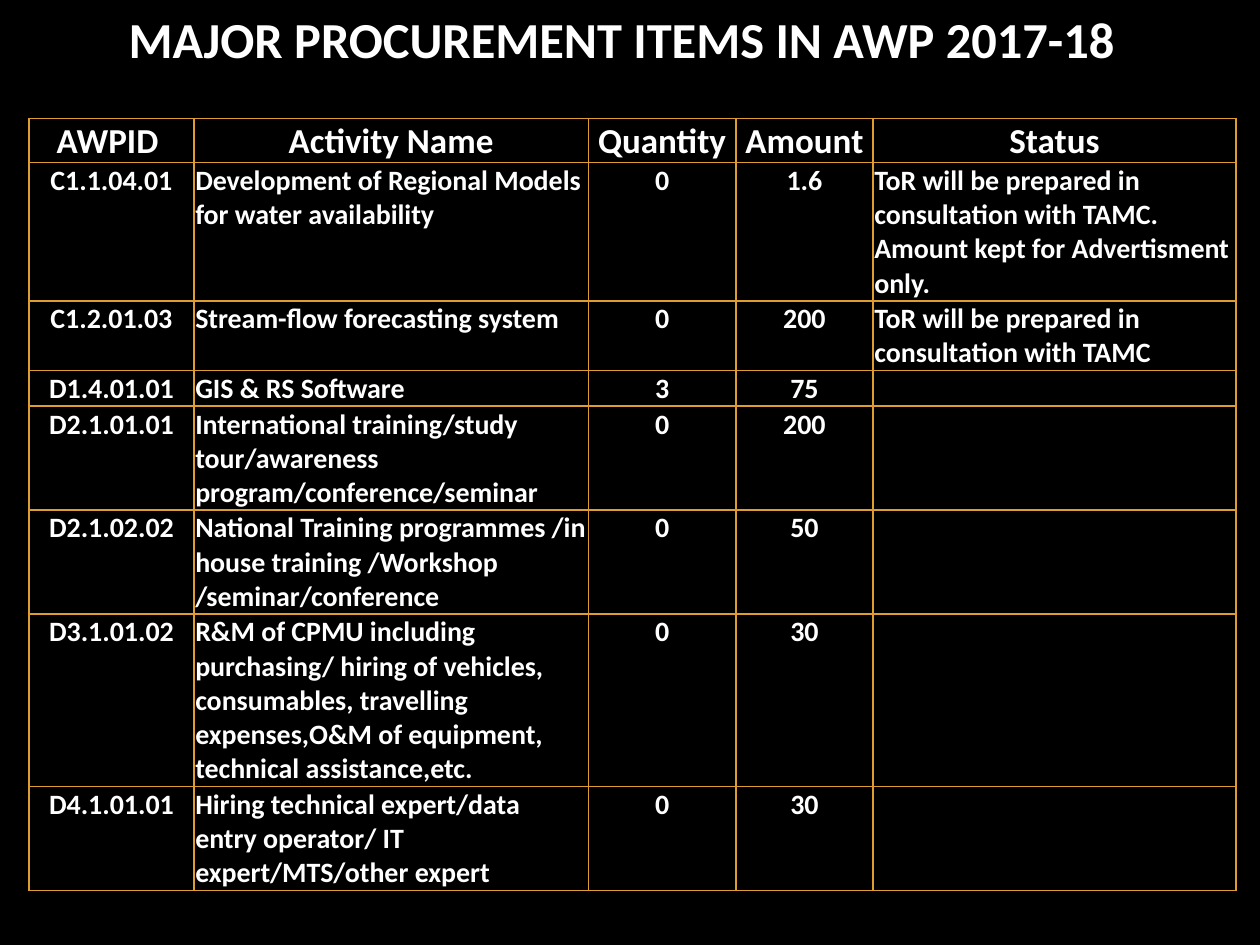
from dataclasses import dataclass

from lxml import etree
from pptx import Presentation
from pptx.dml.color import RGBColor
from pptx.enum import text as t
from pptx.oxml import ns
from pptx.util import Inches, Pt


@dataclass(frozen=True)
class Theme:
    back: RGBColor = RGBColor(0x00, 0x00, 0x00)
    ink: RGBColor = RGBColor(0xFF, 0xFF, 0xFF)
    rule: str = "DD9D31"
    rule_width: int = Pt(1)
    font: str = "Calibri"
    title: float = 28.8
    head: int = 20
    body: int = 16


THEME = Theme()
TITLE = "MAJOR PROCUREMENT ITEMS IN AWP 2017-18"
HEADERS = ("AWPID ", "Activity Name", "Quantity", "Amount", "Status")
ITEMS = (
    ("C1.1.04.01", "Development of Regional Models for water availability", "0", "1.6",
     "ToR will be prepared in consultation with TAMC. Amount kept for Advertisment only."),
    ("C1.2.01.03", "Stream-flow forecasting system", "0", "200",
     "ToR will be prepared in consultation with TAMC"),
    ("D1.4.01.01", "GIS & RS Software", "3", "75", ""),
    ("D2.1.01.01", "International training/study tour/awareness program/conference/seminar",
     "0", "200", ""),
    ("D2.1.02.02", "National Training programmes /in house training /Workshop /seminar/conference",
     "0", "50", ""),
    ("D3.1.01.02", "R&M of CPMU including purchasing/ hiring of vehicles, consumables, "
     "travelling expenses,O&M of equipment, technical assistance,etc.", "0", "30", ""),
    ("D4.1.01.01", "Hiring technical expert/data entry operator/ IT expert/MTS/other expert",
     "0", "30", ""),
)
COLUMN_WIDTHS = (1.31, 3.13, 1.17, 1.09, 2.88)
ROW_HEIGHTS = (0.35, 1.09, 0.55, 0.28, 0.82, 0.82, 1.36, 0.82)
LEFT_COLUMNS = (1, 4)


def style(p, size, align):
    p.alignment = align
    p.font.name = THEME.font
    p.font.size = Pt(size)
    p.font.bold = True
    p.font.color.rgb = THEME.ink


def add_borders(cell):
    tcPr = cell._tc.get_or_add_tcPr()
    for i, side in enumerate(("lnL", "lnR", "lnT", "lnB")):
        ln = etree.Element(ns.qn(f"a:{side}"), w=str(THEME.rule_width))
        fill = etree.SubElement(ln, ns.qn("a:solidFill"))
        etree.SubElement(fill, ns.qn("a:srgbClr"), val=THEME.rule)
        tcPr.insert(i, ln)


def fill_cell(cell, value, size, align):
    cell.margin_left = cell.margin_right = cell.margin_top = Inches(0.01)
    cell.margin_bottom = 0
    cell.fill.background()
    add_borders(cell)
    p = cell.text_frame.paragraphs[0]
    if value:
        p.text = value
    else:
        etree.SubElement(p._p, ns.qn("a:endParaRPr"), sz=str(size * 100))
    style(p, size, align)


def place_title(s, left, top, width, height):
    sp = s.shapes.title
    sp.left, sp.top, sp.width, sp.height = left, top, width, height
    tf = sp.text_frame
    tf.text = TITLE
    tf.word_wrap = True
    tf.auto_size = t.MSO_AUTO_SIZE.NONE
    tf.vertical_anchor = t.MSO_ANCHOR.MIDDLE
    style(tf.paragraphs[0], THEME.title, t.PP_ALIGN.LEFT)


def place_table(s, left, top, width, height):
    rows = (HEADERS, *ITEMS)
    table = s.shapes.add_table(len(rows), len(HEADERS), left, top, width, height).table
    table.first_row = table.horz_banding = False
    for column, w in zip(table.columns, COLUMN_WIDTHS):
        column.width = Inches(w)
    for row, h in zip(table.rows, ROW_HEIGHTS):
        row.height = Inches(h)
    for i, values in enumerate(rows):
        size = THEME.body if i else THEME.head
        for j, value in enumerate(values):
            is_left = i and j in LEFT_COLUMNS
            align = t.PP_ALIGN.LEFT if is_left else t.PP_ALIGN.CENTER
            fill_cell(table.cell(i, j), value, size, align)


def main():
    prs = Presentation()
    prs.slide_width, prs.slide_height = Inches(10), Inches(7.5)
    s = prs.slides.add_slide(prs.slide_layouts[5])
    s.background.fill.solid()
    s.background.fill.fore_color.rgb = THEME.back
    place_title(s, Inches(0.92), Inches(0.08), Inches(8.5), Inches(0.45))
    place_table(s, Inches(0.23), Inches(0.94),
                Inches(sum(COLUMN_WIDTHS)), Inches(sum(ROW_HEIGHTS)))
    prs.save("out.pptx")


if __name__ == "__main__":
    main()
